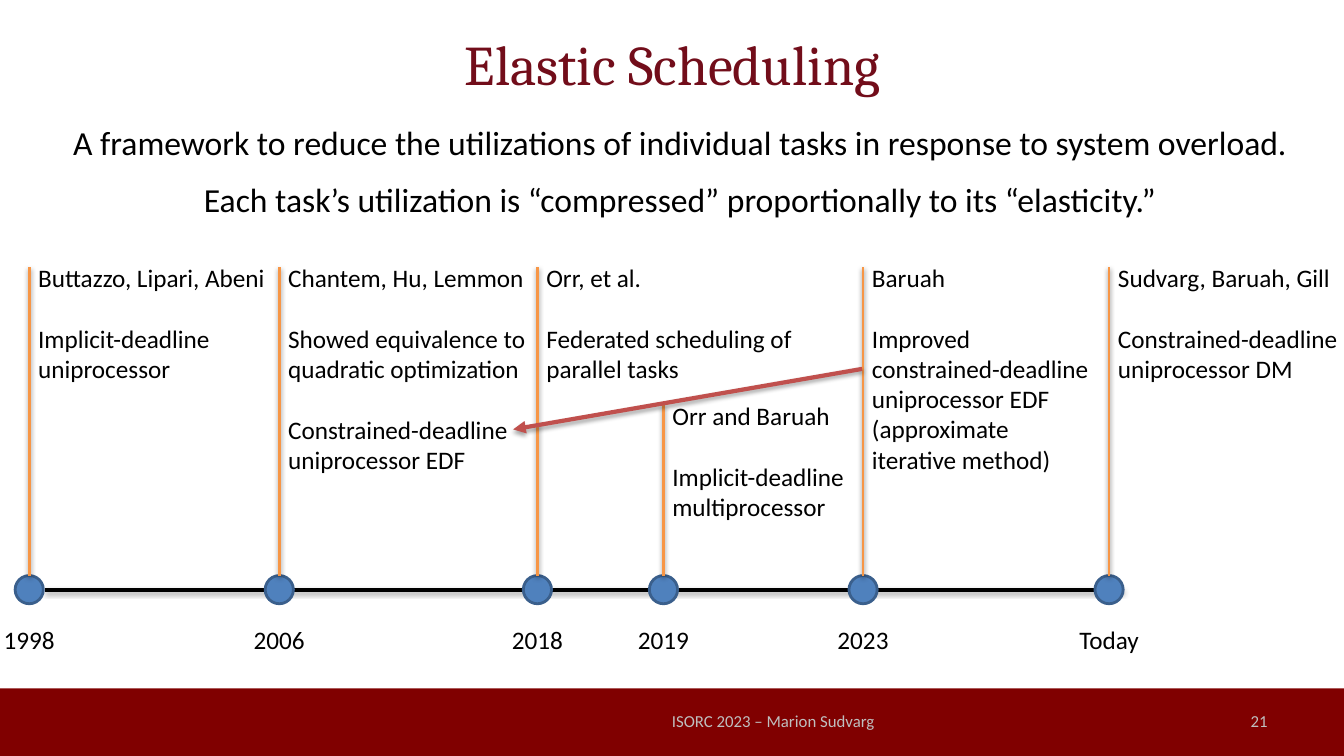
"""Build the Elastic Scheduling timeline slide."""
from dataclasses import dataclass

from lxml import etree
from pptx import Presentation
from pptx.dml.color import RGBColor
from pptx.enum import shapes as kinds, text as modes
from pptx.oxml import parse_xml
from pptx.oxml.ns import nsdecls, qn
from pptx.shapes.autoshape import Shape
from pptx.shapes.connector import Connector
from pptx.slide import Slide
from pptx.util import Inches, Pt

Point = tuple[float, float]
Box = tuple[float, float, float, float]


@dataclass(frozen=True)
class Theme:
    """Colours, fonts and type sizes."""
    title: str = "720D1A"
    ink: str = "000000"
    band: str = "800000"
    pale: str = "BFBFBF"
    dot: str = "4F81BD"
    rim: str = "3A5F8C"
    stem: str = "F79646"
    arrow: str = "C0504D"
    head: str = "Cambria"
    body: str = "Calibri"
    huge: float = 40
    large: float = 24
    base: float = 18
    small: float = 12


@dataclass(frozen=True)
class Event:
    """One dated entry on the timeline."""
    date: str
    x: float
    width: float
    note: str
    top: float = 2.65


LOOK = Theme()
AXIS = 5.85
SIZE = 0.28
LABEL = 0.8
EVENTS = [
    Event("1998", 0.29, 2.49, "Buttazzo, Lipari, Abeni\n\nImplicit-deadline uniprocessor"),
    Event("2006", 2.77, 2.61, "Chantem, Hu, Lemmon\n\nShowed equivalence to quadratic optimization"
          "\n\nConstrained-deadline uniprocessor EDF"),
    Event("2018", 5.33, 3.05, "Orr, et al.\n\nFederated scheduling of parallel tasks"),
    Event("2019", 6.58, 3.05, "Orr and Baruah\n\nImplicit-deadline multiprocessor", 4.02),
    Event("2023", 8.56, 2.38, "Baruah\n\nImproved constrained-deadline uniprocessor EDF"
          "\n(approximate iterative method)"),
    Event("Today", 11, 2.47, "Sudvarg, Baruah, Gill\n\nConstrained-deadline uniprocessor DM"),
]


def rgb(code: str) -> RGBColor:
    """Turn a hex code into a colour."""
    return RGBColor.from_string(code)


def write(slide: Slide, words: str, box: Box, *, size: float = LOOK.base,
          font: str = LOOK.body, color: str = LOOK.ink, align: str = "LEFT",
          anchor: str = "TOP", wrap: bool = True, after: float = 0, gap: float = 22) -> None:
    """Write text in a box, with a gap before each block that follows a blank line."""
    frame = slide.shapes.add_textbox(*map(Inches, box)).text_frame
    frame.word_wrap = wrap
    if not wrap:
        frame.auto_size = modes.MSO_AUTO_SIZE.SHAPE_TO_FIT_TEXT
    frame.vertical_anchor = getattr(modes.MSO_ANCHOR, anchor)
    blocks = [block.split("\n") for block in words.split("\n\n")]
    rows = [(line, b > 0 and n == 0) for b, block in enumerate(blocks)
            for n, line in enumerate(block)]
    for i, (line, apart) in enumerate(rows):
        para = frame.paragraphs[0] if i == 0 else frame.add_paragraph()
        para.alignment = getattr(modes.PP_ALIGN, align)
        para.space_before = Pt(gap if apart else 0)
        para.space_after = Pt(after)
        run = para.add_run()
        run.text = line
        run.font.name = font
        run.font.size = Pt(size)
        run.font.color.rgb = rgb(color)


def fill(slide: Slide, kind: kinds.MSO_SHAPE, box: Box, color: str,
         rim: str | None = None) -> Shape:
    """Draw a filled shape with an optional rim."""
    shape = slide.shapes.add_shape(kind, *map(Inches, box))
    shape.shadow.inherit = False
    shape.fill.solid()
    shape.fill.fore_color.rgb = rgb(color)
    if rim:
        shape.line.color.rgb = rgb(rim)
        shape.line.width = Pt(2)
    else:
        shape.line.fill.background()
    return shape


def rule(slide: Slide, start: Point, end: Point, color: str, width: float, *,
         head: bool = False, alpha: int = 35) -> Connector:
    """Draw a straight line with a soft shadow and an optional arrowhead."""
    line = slide.shapes.add_connector(
        kinds.MSO_CONNECTOR.STRAIGHT, *map(Inches, start + end))
    line.line.color.rgb = rgb(color)
    line.line.width = Pt(width)
    props = line._element.spPr
    if head:
        etree.SubElement(props.find(qn("a:ln")), qn("a:tailEnd"), type="triangle")
    props.append(parse_xml(
        f'<a:effectLst {nsdecls("a")}><a:outerShdw blurRad="40000" dist="22000" '
        f'dir="5400000" rotWithShape="0"><a:srgbClr val="{LOOK.ink}">'
        f'<a:alpha val="{alpha * 1000}"/></a:srgbClr></a:outerShdw></a:effectLst>'))
    return line


def mark(slide: Slide, event: Event) -> None:
    """Draw an event with its dot, stem, date and note."""
    x, top = event.x, AXIS - SIZE / 2
    dot = fill(slide, kinds.MSO_SHAPE.OVAL, (x - SIZE / 2, top, SIZE, SIZE),
               LOOK.dot, LOOK.rim)
    write(slide, event.date, (x - LABEL / 2, 6.14, LABEL, 0.4), align="CENTER", wrap=False)
    stem = rule(slide, (x, top), (x, event.top), LOOK.stem, 2, alpha=38)
    stem.begin_connect(dot, 0)
    write(slide, event.note, (x - 0.01, event.top - 0.1, event.width, 1.31))


def main() -> None:
    """Build and save the slide."""
    deck = Presentation()
    deck.slide_width, deck.slide_height = Inches(13.33), Inches(7.5)
    slide = deck.slides.add_slide(deck.slide_layouts[6])
    fill(slide, kinds.MSO_SHAPE.RECTANGLE, (0, 6.83, 13.33, 0.67), LOOK.band)
    write(slide, "Elastic Scheduling", (0.67, 0, 12, 1.25), size=LOOK.huge,
          font=LOOK.head, color=LOOK.title, align="CENTER", anchor="MIDDLE")
    write(slide, "21", (9.56, 6.95, 3.11, 0.4), size=LOOK.small,
          color=LOOK.pale, align="RIGHT", anchor="MIDDLE")
    write(slide, "ISORC 2023 – Marion Sudvarg", (5.56, 6.95, 4.22, 0.4),
          size=LOOK.small, color=LOOK.pale, align="CENTER", anchor="MIDDLE")
    write(slide, "A framework to reduce the utilizations of individual tasks in response "
          "to system overload.\nEach task’s utilization is “compressed” proportionally "
          "to its “elasticity.”", (0.53, 1.16, 12.43, 1.08), size=LOOK.large,
          align="CENTER", after=12)
    rule(slide, (0.45, AXIS), (11.14, AXIS), LOOK.ink, 3)
    for event in EVENTS:
        mark(slide, event)
    rule(slide, (8.55, 3.66), (5.09, 4.26), LOOK.arrow, 3, head=True)
    deck.save("out.pptx")


if __name__ == "__main__":
    main()
